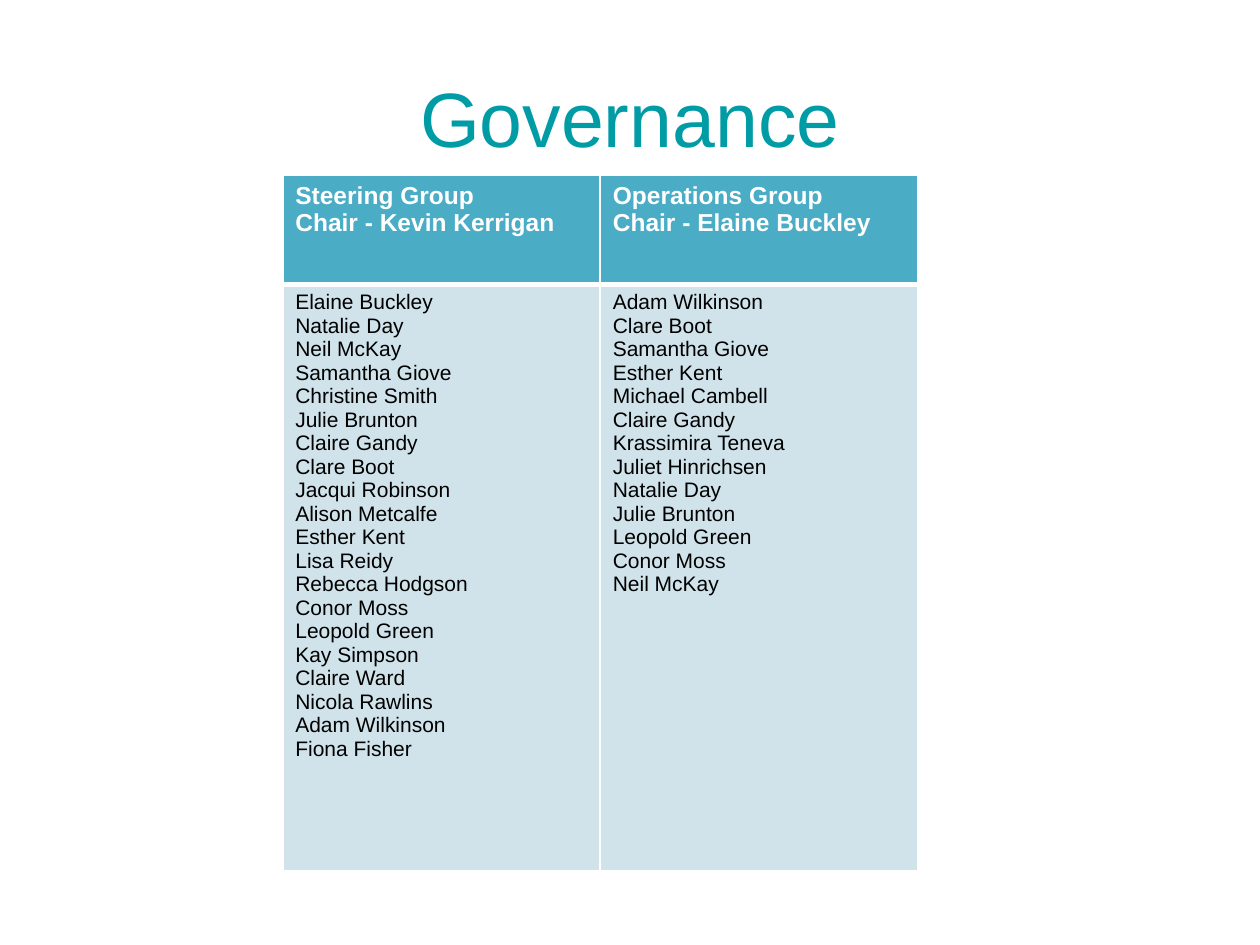
from lxml.etree import SubElement
from pptx import Presentation
from pptx.dml.color import RGBColor
from pptx.enum.text import MSO_ANCHOR, PP_ALIGN
from pptx.oxml.ns import qn
from pptx.util import Cm, Pt

TITLE_FORMAT = {"name": "Arial", "size": Pt(44), "bold": False}
HEADER_FORMAT = {"name": "Arial", "size": Pt(14), "bold": True}
MEMBER_FORMAT = {"name": "Arial", "size": Pt(12), "bold": False}

GROUPS = [
    (
        ["Steering Group", "Chair - Kevin Kerrigan"],
        ["Elaine Buckley", "Natalie Day", "Neil McKay", "Samantha Giove",
         "Christine Smith", "Julie Brunton", "Claire Gandy", "Clare Boot",
         "Jacqui Robinson", "Alison Metcalfe", "Esther Kent", "Lisa Reidy",
         "Rebecca Hodgson", "Conor Moss", "Leopold Green", "Kay Simpson",
         "Claire Ward", "Nicola Rawlins", "Adam Wilkinson", "Fiona Fisher"],
    ),
    (
        ["Operations Group", "Chair - Elaine Buckley"],
        ["Adam Wilkinson", "Clare Boot", "Samantha Giove", "Esther Kent",
         "Michael Cambell", "Claire Gandy", "Krassimira Teneva",
         "Juliet Hinrichsen", "Natalie Day", "Julie Brunton",
         "Leopold Green", "Conor Moss", "Neil McKay"],
    ),
]


def color(hex_value):
    return RGBColor.from_string(hex_value)


def set_attributes(target, values):
    for attribute, value in values.items():
        setattr(target, attribute, value)


def write_lines(frame, lines, font_format, font_color):
    frame.text = "\n".join(lines)
    for line in frame.paragraphs:
        for run in line.runs:
            set_attributes(run.font, font_format)
            run.font.color.rgb = color(font_color)


def add_borders(cell, widths, border_color):
    properties = cell._tc.get_or_add_tcPr()
    for side, width in widths.items():
        border = SubElement(properties, qn(f"a:ln{side}"), w=str(Pt(width)))
        fill = SubElement(border, qn("a:solidFill"))
        SubElement(fill, qn("a:srgbClr"), val=border_color)


def fill_cell(cell, lines, font_format, font_color, fill_color, widths):
    add_borders(cell, widths, "FFFFFF")
    cell.fill.solid()
    cell.fill.fore_color.rgb = color(fill_color)
    write_lines(cell.text_frame, lines, font_format, font_color)


def add_title(slide, wording):
    heading = slide.shapes.title
    set_attributes(heading, {"left": Cm(1.27), "top": Cm(0.76),
                             "width": Cm(22.86), "height": Cm(3.18)})
    heading.text_frame.vertical_anchor = MSO_ANCHOR.MIDDLE
    write_lines(heading.text_frame, [wording], TITLE_FORMAT, "009CA6")
    heading.text_frame.paragraphs[0].alignment = PP_ALIGN.CENTER


def add_group_table(slide, groups):
    membership = slide.shapes.add_table(
        2, len(groups), Cm(5.7), Cm(3.54), Cm(12.8), Cm(14.01)).table
    for row, height in zip(membership.rows, (2.19, 11.82)):
        row.height = Cm(height)
    for column, (heading, members) in enumerate(groups):
        membership.columns[column].width = Cm(6.4)
        fill_cell(membership.cell(0, column), heading, HEADER_FORMAT,
                  "FFFFFF", "4BACC6", {"L": 1, "R": 1, "T": 1, "B": 3})
        fill_cell(membership.cell(1, column), members, MEMBER_FORMAT,
                  "000000", "D0E3EA", {"L": 1, "R": 1, "T": 3, "B": 1})


def main():
    deck = Presentation()
    set_attributes(deck, {"slide_width": Cm(25.4), "slide_height": Cm(19.05)})
    slide = deck.slides.add_slide(deck.slide_layouts[5])
    add_title(slide, "Governance")
    add_group_table(slide, GROUPS)
    deck.save("out.pptx")


if __name__ == "__main__":
    main()
